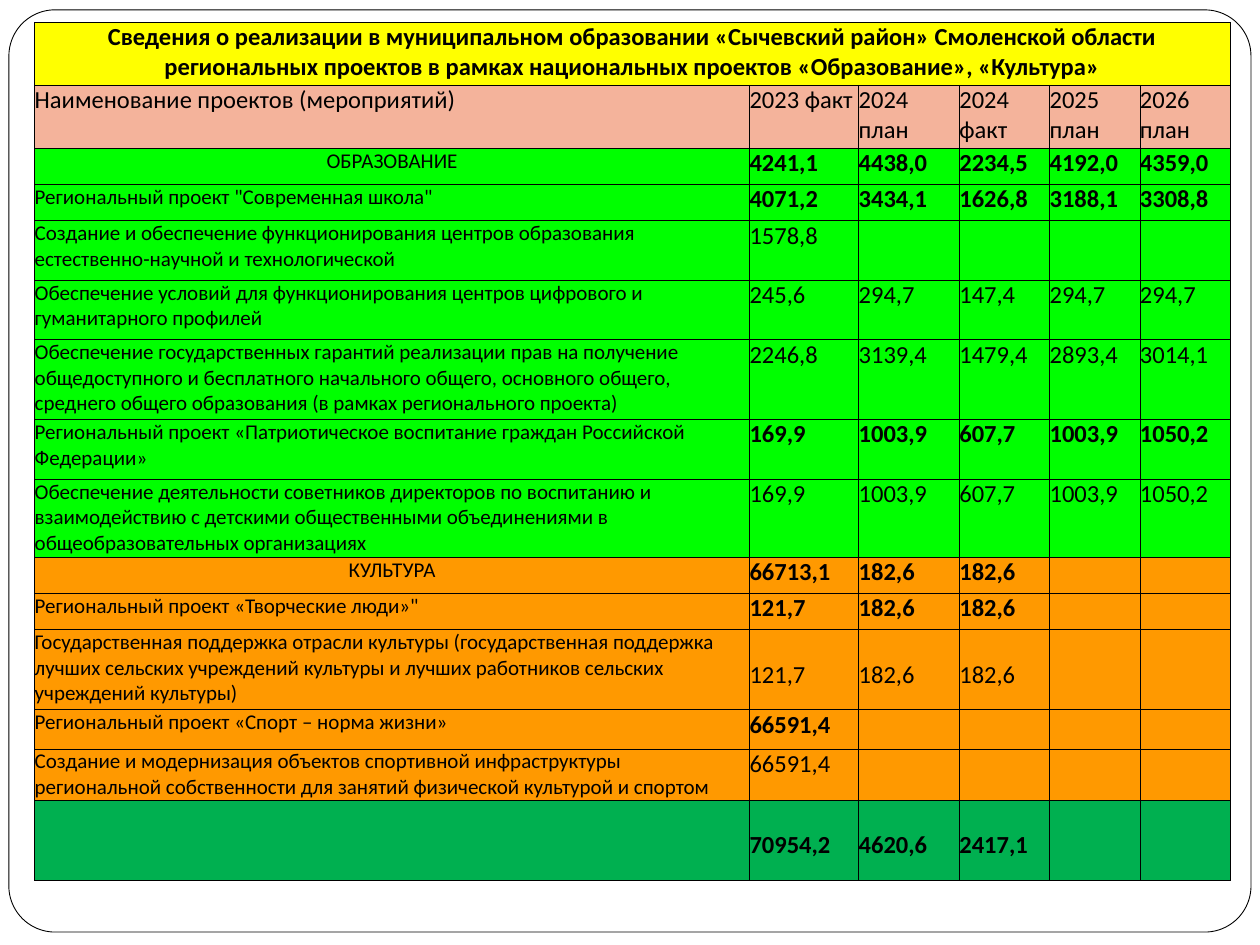
from dataclasses import dataclass

from lxml import etree
from pptx import Presentation
from pptx import util as u
from pptx.dml.color import RGBColor
from pptx.enum import shapes, text
from pptx.oxml import ns


@dataclass(frozen=True)
class Theme:
    """Colours, font and type sizes of the page."""
    font: str = "Calibri"
    large: int = 14
    small: int = 12
    line: float = 0.5
    ink: str = "000000"
    paper: str = "FFFFFF"
    title: str = "FFFF00"
    header: str = "F4B39B"
    education: str = "00FF00"
    culture: str = "FF9900"
    total: str = "00B050"


THEME = Theme()
LEFT, CENTER = text.PP_ALIGN.LEFT, text.PP_ALIGN.CENTER
TOP, MIDDLE = text.MSO_ANCHOR.TOP, text.MSO_ANCHOR.MIDDLE
TITLE = (
    "Сведения о реализации в муниципальном образовании «Сычевский район» Смоленской области\n"
    "региональных проектов в рамках национальных проектов «Образование», «Культура»"
)
HEADER = ["Наименование проектов (мероприятий)", "2023 факт", "2024 план",
          "2024 факт", "2025 план", "2026 план"]
COLUMN_WIDTHS = [14.41, 2.2, 2.03, 1.82, 1.82, 1.82]
TITLE_HEIGHT = HEADER_HEIGHT = 1.27


@dataclass(frozen=True)
class Row:
    """One line of the budget: its name, yearly values and look."""
    height: float
    fill: str
    name: str
    values: str
    bold: bool = False
    align: int = LEFT
    anchor: int = TOP


ROWS = [
    Row(0.73, THEME.education, "ОБРАЗОВАНИЕ", "4241,1 4438,0 2234,5 4192,0 4359,0", True, CENTER),
    Row(0.73, THEME.education, 'Региональный проект "Современная школа"',
        "4071,2 3434,1 1626,8 3188,1 3308,8", True),
    Row(1.2, THEME.education, "Создание и обеспечение функционирования центров образования "
        "естественно-научной и технологической", "1578,8"),
    Row(1.2, THEME.education, "Обеспечение условий для функционирования центров цифрового и "
        "гуманитарного профилей", "245,6 294,7 147,4 294,7 294,7"),
    Row(1.61, THEME.education, "Обеспечение государственных гарантий реализации прав на получение "
        "общедоступного и бесплатного начального общего, основного общего, среднего общего "
        "образования (в рамках регионального проекта)", "2246,8 3139,4 1479,4 2893,4 3014,1"),
    Row(1.2, THEME.education, "Региональный проект «Патриотическое воспитание граждан Российской "
        "Федерации»", "169,9 1003,9 607,7 1003,9 1050,2", True),
    Row(1.57, THEME.education, "Обеспечение деятельности советников директоров по воспитанию и "
        "взаимодействию с детскими общественными объединениями в общеобразовательных "
        "организациях", "169,9 1003,9 607,7 1003,9 1050,2"),
    Row(0.73, THEME.culture, "КУЛЬТУРА", "66713,1 182,6 182,6", True, CENTER),
    Row(0.73, THEME.culture, 'Региональный проект «Творческие люди»"', "121,7 182,6 182,6", True),
    Row(1.62, THEME.culture, "Государственная поддержка отрасли культуры (государственная "
        "поддержка лучших сельских учреждений культуры и лучших работников сельских "
        "учреждений культуры)", "121,7 182,6 182,6", anchor=MIDDLE),
    Row(0.79, THEME.culture, "Региональный проект «Спорт – норма жизни»", "66591,4", True),
    Row(1.03, THEME.culture, "Создание и модернизация объектов спортивной инфраструктуры "
        "региональной собственности для занятий физической культурой и спортом", "66591,4"),
    Row(1.62, THEME.total, "", "70954,2 4620,6 2417,1", True, anchor=MIDDLE),
]


def outline_cell(cell):
    """Draw a thin line on all four sides of a cell."""
    properties = cell._tc.get_or_add_tcPr()
    for index, side in enumerate(("lnL", "lnR", "lnT", "lnB")):
        line = etree.Element(ns.qn(f"a:{side}"), w=str(u.Pt(THEME.line)))
        fill = etree.SubElement(line, ns.qn("a:solidFill"))
        etree.SubElement(fill, ns.qn("a:srgbClr"), val=THEME.ink)
        properties.insert(index, line)


def fill_cell(cell, words, fill, size, bold=False, align=LEFT, anchor=TOP):
    """Give a cell its words, colour, type and outline."""
    cell.fill.solid()
    cell.fill.fore_color.rgb = RGBColor.from_string(fill)
    cell.margin_left = cell.margin_right = cell.margin_bottom = 0
    cell.margin_top = u.Cm(0.2) if anchor == MIDDLE else 0
    cell.vertical_anchor = anchor
    cell.text = words
    for para in cell.text_frame.paragraphs:
        para.alignment = align
        para.font.name = THEME.font
        para.font.size = u.Pt(size)
        para.font.bold = bold
        para.font.color.rgb = RGBColor.from_string(THEME.ink)
    outline_cell(cell)


def add_frame(page, left, top, width, height):
    """Place the rounded frame around the page."""
    frame = page.shapes.add_shape(shapes.MSO_SHAPE.ROUNDED_RECTANGLE,
                                  u.Cm(left), u.Cm(top), u.Cm(width), u.Cm(height))
    frame.adjustments[0] = 0.05
    frame.shadow.inherit = False
    frame.fill.solid()
    frame.fill.fore_color.rgb = RGBColor.from_string(THEME.paper)
    frame.line.color.rgb = RGBColor.from_string(THEME.ink)
    frame.line.width = u.Pt(THEME.line)


def add_budget_table(page, left, top):
    """Place the table of projects with its title and header."""
    heights = [TITLE_HEIGHT, HEADER_HEIGHT] + [row.height for row in ROWS]
    table = page.shapes.add_table(len(heights), len(COLUMN_WIDTHS), u.Cm(left), u.Cm(top),
                                  u.Cm(sum(COLUMN_WIDTHS)), u.Cm(sum(heights))).table
    table.first_row = table.horz_banding = False
    for column, width in zip(table.columns, COLUMN_WIDTHS):
        column.width = u.Cm(width)
    for line, height in zip(table.rows, heights):
        line.height = u.Cm(height)

    last = len(COLUMN_WIDTHS) - 1
    table.cell(0, 0).merge(table.cell(0, last))
    for column, heading in enumerate(HEADER):
        fill_cell(table.cell(0, column), "" if column else TITLE, THEME.title,
                  THEME.large, True, CENTER)
        fill_cell(table.cell(1, column), heading, THEME.header, THEME.large)
    for index, row in enumerate(ROWS, start=2):
        fill_cell(table.cell(index, 0), row.name, row.fill, THEME.small, align=row.align)
        values = row.values.split()
        values += [""] * (last - len(values))
        for column, value in enumerate(values, start=1):
            fill_cell(table.cell(index, column), value, row.fill, THEME.large,
                      row.bold, anchor=row.anchor)


def main():
    """Build the deck and save it."""
    deck = Presentation()
    deck.slide_width, deck.slide_height = u.Cm(25.4), u.Cm(19.05)
    page = deck.slides.add_slide(deck.slide_layouts[6])
    add_frame(page, 0.18, 0.2, 25.04, 18.59)
    add_budget_table(page, 0.7, 0.45)
    deck.save("out.pptx")


if __name__ == "__main__":
    main()
